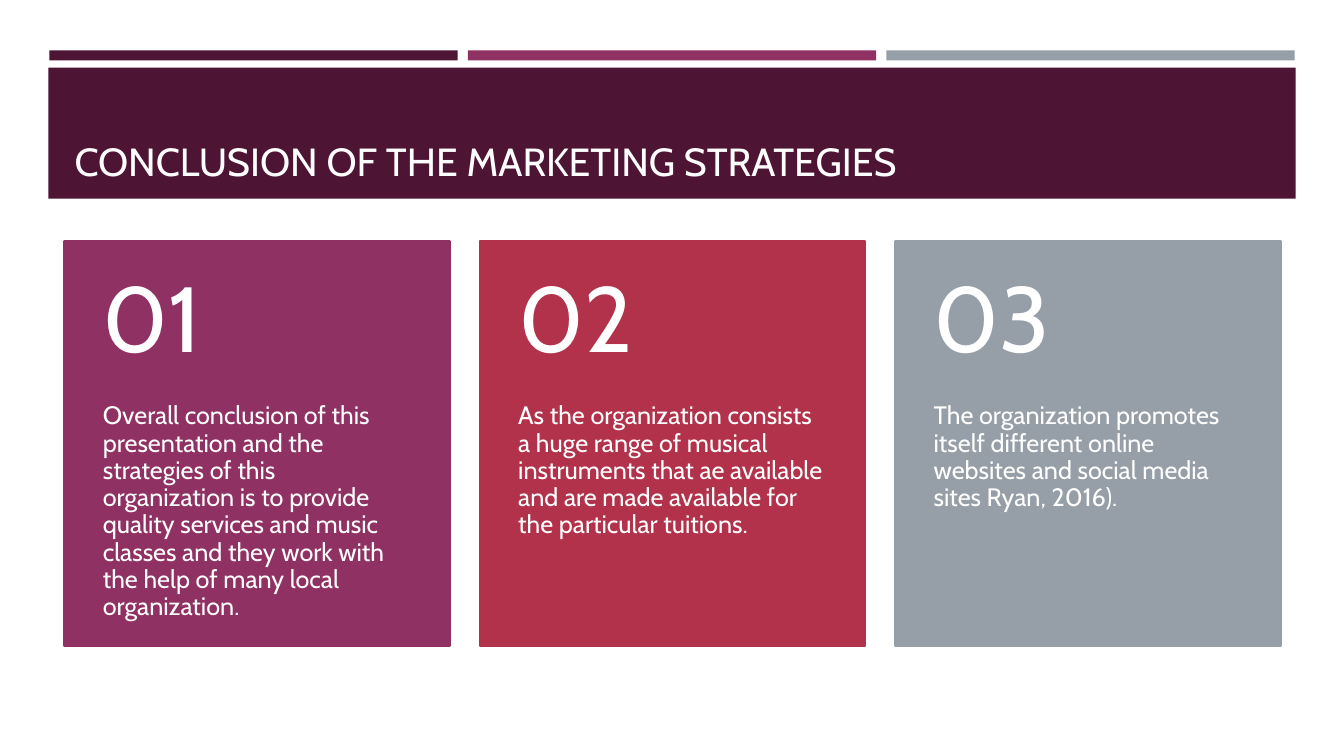
from dataclasses import dataclass

from pptx import Presentation
from pptx.dml.color import RGBColor
from pptx.enum.shapes import MSO_SHAPE
from pptx.enum.text import MSO_ANCHOR, MSO_AUTO_SIZE, PP_ALIGN
from pptx.util import Pt

TITLE = "CONCLUSION OF THE MARKETING STRATEGIES"
CARDS = [
    ("01", "Overall conclusion of this presentation and the strategies of this "
           "organization is to provide quality services and music classes and "
           "they work with the help of many local organization."),
    ("02", "As the organization consists a huge range of musical instruments "
           "that ae available and are made available for the particular "
           "tuitions."),
    ("03", "The organization promotes itself different online websites and "
           "social media sites Ryan, 2016)."),
]


@dataclass(frozen=True)
class Theme:
    font: str = "Cabin"
    banner: str = "4D1434"
    strips: tuple = ("4D1434", "903163", "969FA7")
    cards: tuple = ("903163", "B2324B", "969FA7")
    title_text: str = "FFFEFF"
    card_text: str = "FFFFFF"
    title_size: int = 28
    number_size: int = 66
    body_size: int = 18
    outline: float = 1.75


THEME = Theme()
PX = 9144

SLIDE_W, SLIDE_H = 1333, 750
STRIP_X, STRIP_Y, STRIP_W, STRIP_H, STRIP_STEP = 49, 50, 405, 10, 415
BANNER = (48, 67, 1237, 130)
TITLE_BOX = (64, 77, 1206, 111)
CARD_X, CARD_Y, CARD_W, CARD_H, CARD_STEP = 64, 239, 382, 402, 412
NUMBER_H = 161
NUMBER_INSETS = (38, 18, 38, 18)
BODY_INSETS = (38, 0, 38, 36)


def emu(values):
    return [v * PX for v in values]


def add_rect(s, box, color, outline=None):
    sp = s.shapes.add_shape(MSO_SHAPE.RECTANGLE, *emu(box))
    sp.shadow.inherit = False
    sp.fill.solid()
    sp.fill.fore_color.rgb = RGBColor.from_string(color)
    if outline:
        sp.line.color.rgb = RGBColor.from_string(color)
        sp.line.width = Pt(outline)
    else:
        sp.line.fill.background()


def write(sp, text, size, color, anchor, insets=None, spacing=None):
    tf = sp.text_frame
    tf.word_wrap = True
    tf.auto_size = MSO_AUTO_SIZE.NONE
    tf.vertical_anchor = anchor
    if insets:
        (tf.margin_left, tf.margin_top,
         tf.margin_right, tf.margin_bottom) = emu(insets)
    p = tf.paragraphs[0]
    p.alignment = PP_ALIGN.LEFT
    if spacing:
        p.line_spacing = spacing
    r = p.add_run()
    r.text = text
    r.font.name = THEME.font
    r.font.size = Pt(size)
    r.font.color.rgb = RGBColor.from_string(color)


def add_title(s):
    sp = s.shapes.title
    sp.left, sp.top, sp.width, sp.height = emu(TITLE_BOX)
    write(sp, TITLE, THEME.title_size, THEME.title_text, MSO_ANCHOR.BOTTOM)
    s.shapes._spTree.append(sp._element)


def add_card(s, i, number, body):
    x = CARD_X + i * CARD_STEP
    add_rect(s, (x, CARD_Y, CARD_W, CARD_H), THEME.cards[i], THEME.outline)
    parts = [
        (body, CARD_Y + NUMBER_H, CARD_H - NUMBER_H, THEME.body_size,
         MSO_ANCHOR.TOP, BODY_INSETS),
        (number, CARD_Y, NUMBER_H, THEME.number_size,
         MSO_ANCHOR.MIDDLE, NUMBER_INSETS),
    ]
    for text, y, h, size, anchor, insets in parts:
        sp = s.shapes.add_textbox(*emu((x, y, CARD_W, h)))
        write(sp, text, size, THEME.card_text, anchor, insets, 0.9)


def main():
    prs = Presentation()
    prs.slide_width, prs.slide_height = emu((SLIDE_W, SLIDE_H))
    s = prs.slides.add_slide(prs.slide_layouts[5])
    for i, color in enumerate(THEME.strips):
        add_rect(s, (STRIP_X + i * STRIP_STEP, STRIP_Y, STRIP_W, STRIP_H), color)
    add_rect(s, BANNER, THEME.banner)
    add_title(s)
    for i, (number, body) in enumerate(CARDS):
        add_card(s, i, number, body)
    prs.save("out.pptx")


if __name__ == "__main__":
    main()
